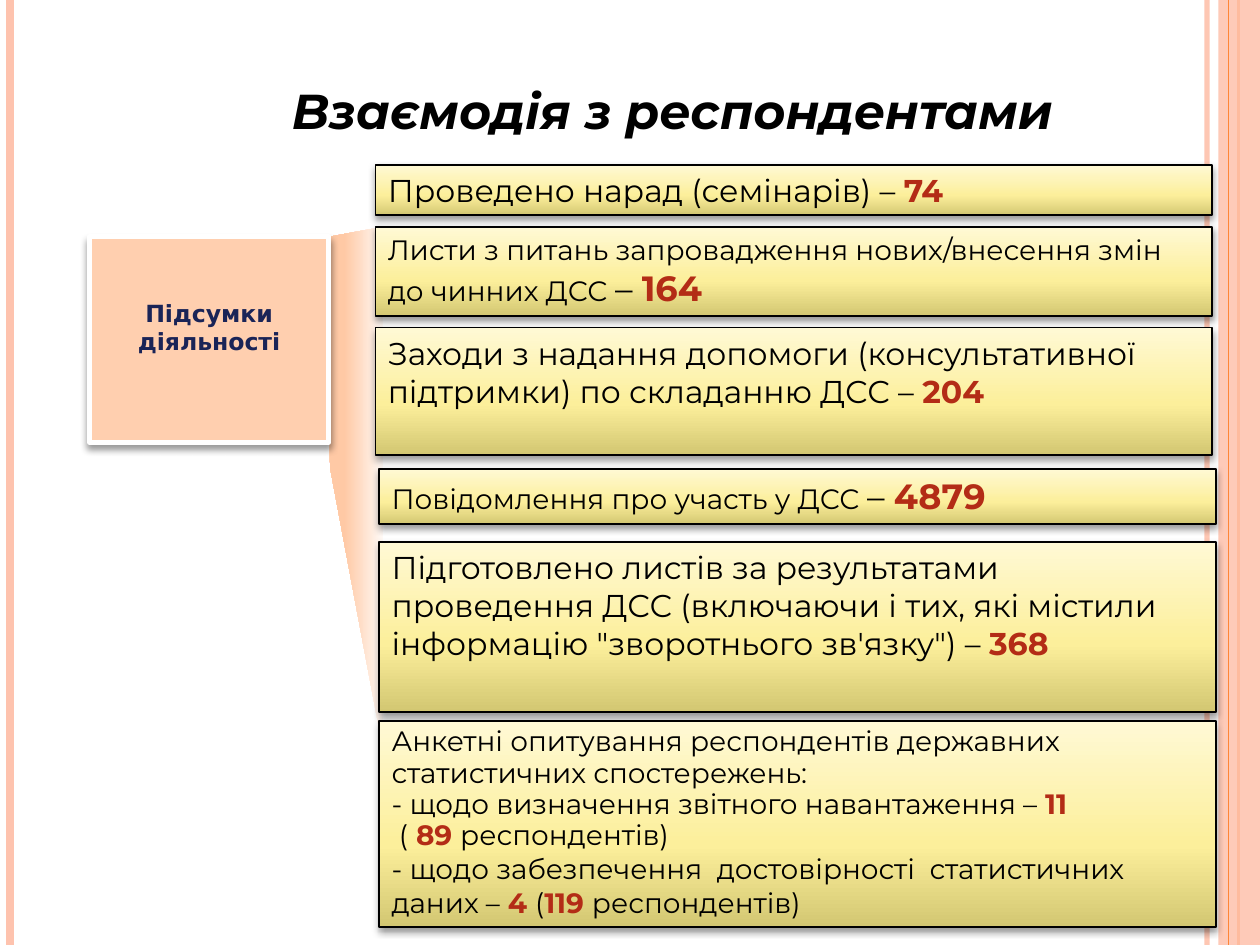
import pptx
import pptx.util
import pptx.dml.color
import pptx.enum.shapes
import pptx.enum.text
import pptx.oxml
import pptx.oxml.ns

COLORS = {
    "black": "000000", "white": "FFFFFF", "red": "B32C16", "navy": "1A2457",
    "peach": "FFCFAF", "pink": "FEC3AE", "orange": "FE8637",
}
GRADIENTS = {
    "gold": [(0, "D3C772"), (40, "FCEF9B"), (100, "FFF9D5")],
    "funnel": [(0, "FFF9F5"), (72, "FFC9A5")],
}
COLUMNS, ROWS = 100, 75
UNIT = pptx.util.Inches(0.1)
BOX_WIDTH = 66.4
PLAIN = {"name": "Montserrat", "bold": False, "color": "black"}
STRONG = {"name": "Montserrat", "bold": True, "color": "red"}
TITLE = {"name": "Montserrat", "bold": True, "italic": True, "size": 28, "color": "black"}
LABEL = {"name": "DejaVu Sans", "bold": True, "size": 13.5, "color": "navy"}

STRIPES = [
    (95.8, "pink", 3, 93), (0.8, "pink", 4.5, 100),
    (98.3, "orange", 1.5, 100), (97.5, "orange", 0.75, 100),
]


def plain(text, size=18):
    return text, {**PLAIN, "size": size}


def strong(text, size=18):
    return text, {**STRONG, "size": size}


RESULTS = [
    (29.8, 13.1, 4, [(1, [plain("Проведено нарад (семінарів) – "), strong("74")])]),
    (29.8, 18, 7.1, [(1, [
        plain("Листи з питань запровадження нових/внесення змін до чинних ДСС ", 16),
        plain("– ", 20), strong("164", 20)])]),
    (29.8, 26, 10.1, [(1, [
        plain("Заходи з надання допомоги (консультативної підтримки) по складанню ДСС – "),
        strong("204")])]),
    (30.1, 37.2, 4.4, [(1, [
        plain("Повідомлення про участь у ДСС ", 16), plain("– ", 20), strong("4879", 20)])]),
    (30.1, 43, 13.5, [(1, [
        plain("Підготовлено листів за результатами проведення ДСС (включаючи і тих, "
              "які містили інформацію \"зворотнього зв'язку\") – "),
        strong("368")])]),
    (30.1, 57.2, 16.4, [
        (0.93, [plain("Анкетні опитування респондентів державних статистичних спостережень:", 16)]),
        (0.93, [plain("- щодо визначення звітного навантаження – ", 16), strong("11", 16)]),
        (0.93, [plain(" (", 16), strong(" 89 ", 16), plain("респондентів)", 16)]),
        (1, [plain("- щодо забезпечення  достовірності  статистичних даних –", 16),
             strong(" 4 ", 16), plain("(", 16), strong("119 ", 16), plain("респондентів)", 16)]),
    ]),
]


def grid(*cells):
    return [round(cell * UNIT) for cell in cells]


def color(name):
    return pptx.dml.color.RGBColor.from_string(COLORS[name])


def set_values(target, values):
    for name, value in values.items():
        setattr(target, name, value)


def add_child(parent, tag, **values):
    child = parent.makeelement(pptx.oxml.ns.qn(tag), {})
    for name, value in values.items():
        child.set(name, str(value))
    parent.append(child)
    return child


def set_alpha(element, percent):
    for tint in element.iter(pptx.oxml.ns.qn("a:srgbClr")):
        add_child(tint, "a:alpha", val=percent * 1000)


def set_gradient(shape, name, angle):
    shape.fill.gradient()
    shape.fill.gradient_angle = angle
    stops = next(shape.element.iter(pptx.oxml.ns.qn("a:gsLst")))
    for stop in list(stops):
        stops.remove(stop)
    for position, tint in GRADIENTS[name]:
        stop = add_child(stops, "a:gs", pos=position * 1000)
        add_child(stop, "a:srgbClr", val=tint)


def set_line(shape, name, width):
    shape.line.color.rgb = color(name)
    shape.line.width = pptx.util.Pt(width)


def add_shadow(shape, distance):
    effects = next(shape.element.iter(pptx.oxml.ns.qn("a:effectLst")))
    shadow = add_child(effects, "a:outerShdw", blurRad=pptx.util.Pt(4),
                       dist=pptx.util.Pt(distance), dir=90 * 60000, rotWithShape=0)
    tint = add_child(shadow, "a:srgbClr", val=COLORS["black"])
    add_child(tint, "a:alpha", val=40000)


def add_rectangle(page, *cells):
    box = page.shapes.add_shape(pptx.enum.shapes.MSO_SHAPE.RECTANGLE, *grid(*cells))
    box.shadow.inherit = False
    return box


def write(box, paragraphs, align, top=0.5):
    frame = box.text_frame
    set_values(frame, {
        "word_wrap": True, "vertical_anchor": pptx.enum.text.MSO_ANCHOR.TOP,
        "margin_top": grid(top)[0],
    })
    for index, (spacing, spans) in enumerate(paragraphs):
        para = frame.add_paragraph() if index else frame.paragraphs[0]
        set_values(para, {"alignment": align, "line_spacing": spacing})
        for text, style in spans:
            span = para.add_run()
            span.text = text
            values = dict(style)
            span.font.color.rgb = color(values.pop("color"))
            values["size"] = pptx.util.Pt(values["size"])
            set_values(span.font, values)


def add_stripe(page, column, name, width, alpha):
    stripe = page.shapes.add_connector(
        pptx.enum.shapes.MSO_CONNECTOR.STRAIGHT, *grid(column, 0, column, ROWS))
    set_line(stripe, name, width)
    if alpha < 100:
        set_alpha(stripe.element, alpha)
    add_child(stripe.element.spPr, "a:effectLst")


def add_band(page):
    band = add_rectangle(page, 96.7, 0, COLUMNS - 96.7, ROWS)
    band.fill.solid()
    band.fill.fore_color.rgb = color("pink")
    set_alpha(band.element.spPr, 87)
    band.line.fill.background()


def add_funnel(page):
    corners = [grid(*corner) for corner in [(30.4, 59.5), (26.2, 37.1), (26.1, 18.8), (30.4, 18)]]
    builder = page.shapes.build_freeform(*corners[0], scale=1.0)
    builder.add_line_segments(corners[1:], close=True)
    funnel = builder.convert_to_shape()
    funnel.shadow.inherit = False
    set_gradient(funnel, "funnel", 180)
    funnel.line.fill.background()


def add_label(page):
    label = add_rectangle(page, 7.1, 18.8, 19, 16.3)
    label.fill.solid()
    label.fill.fore_color.rgb = color("peach")
    set_line(label, "white", 3)
    add_shadow(label, 3)
    write(label, [(1, [("Підсумки діяльності", LABEL)])], pptx.enum.text.PP_ALIGN.CENTER, 4.9)


def add_title(page):
    title = page.shapes.add_textbox(*grid(9.8, 5.9, 87.1, 10.4))
    write(title, [(1, [("Взаємодія з респондентами", TITLE)])], pptx.enum.text.PP_ALIGN.CENTER)


def add_result(page, left, top, height, paragraphs):
    box = add_rectangle(page, left, top, BOX_WIDTH, height)
    set_gradient(box, "gold", 90)
    set_line(box, "black", 1)
    add_shadow(box, 2)
    write(box, paragraphs, pptx.enum.text.PP_ALIGN.LEFT)


def main():
    deck = pptx.Presentation()
    set_values(deck, {"slide_width": COLUMNS * UNIT, "slide_height": ROWS * UNIT})
    page = deck.slides.add_slide(deck.slide_layouts[6])
    for stripe in STRIPES[:3]:
        add_stripe(page, *stripe)
    add_band(page)
    add_stripe(page, *STRIPES[3])
    add_funnel(page)
    add_label(page)
    add_title(page)
    for result in RESULTS:
        add_result(page, *result)
    deck.save("out.pptx")


if __name__ == "__main__":
    main()
